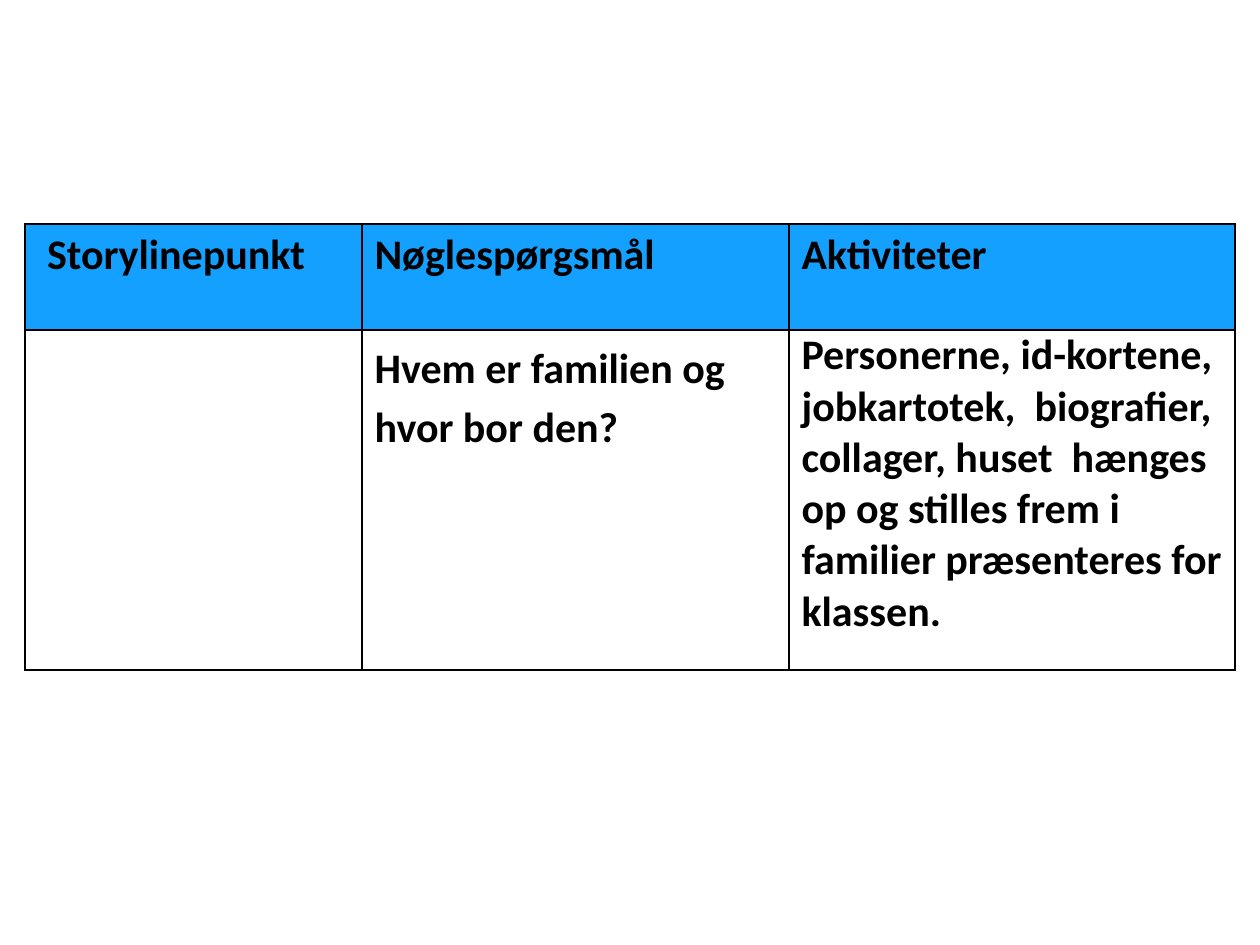
from lxml import etree
from pptx import Presentation
from pptx.dml.color import RGBColor
from pptx.oxml.ns import qn
from pptx.util import Emu, Pt

PX = 914400 // 126
BLACK, BLUE = "000000", "14A0FF"
BLANK_LAYOUT = 6

HEADINGS = [" Storylinepunkt", "Nøglespørgsmål", "Aktiviteter"]
ANSWERS = [
    "",
    "Hvem er familien og hvor bor den?",
    "Personerne, id-kortene, jobkartotek,  biografier, collager, huset  "
    "hænges op og stilles frem i familier præsenteres for klassen.",
]
LEFT, TOP = 25, 224
COLUMN_WIDTHS = [337, 427, 446]
ROW_HEIGHTS = [106, 340]


def px(length):
    return Emu(length * PX)


def color(value):
    return RGBColor.from_string(value)


def write(cell, text, size=24, spacing=None, inset=6):
    cell.margin_top = cell.margin_bottom = px(inset)
    para = cell.text_frame.paragraphs[0]
    para.font.size = Pt(size)
    if spacing:
        para.line_spacing = spacing
    if text:
        span = para.add_run()
        span.text = text
        span.font.name = "Calibri"
        span.font.size = Pt(size)
        span.font.bold = True
        span.font.color.rgb = color(BLACK)


def outline(cell, width=1):
    properties = cell._tc.get_or_add_tcPr()
    for position, side in enumerate(("lnL", "lnR", "lnT", "lnB")):
        line = etree.Element(qn(f"a:{side}"), w=str(Pt(width)))
        fill = etree.SubElement(line, qn("a:solidFill"))
        etree.SubElement(fill, qn("a:srgbClr"), val=BLACK)
        properties.insert(position, line)


deck = Presentation()
deck.slide_width, deck.slide_height = px(1260), px(945)
page = deck.slides.add_slide(deck.slide_layouts[BLANK_LAYOUT])

table = page.shapes.add_table(
    len(ROW_HEIGHTS), len(COLUMN_WIDTHS), px(LEFT), px(TOP),
    px(sum(COLUMN_WIDTHS)), px(sum(ROW_HEIGHTS))).table
table.first_row = table.horz_banding = False
for column, width in zip(table.columns, COLUMN_WIDTHS):
    column.width = px(width)
for row, height in zip(table.rows, ROW_HEIGHTS):
    row.height = px(height)

for cell in table.iter_cells():
    cell.fill.background()
    outline(cell)
for index, heading in enumerate(HEADINGS):
    cell = table.cell(0, index)
    cell.fill.solid()
    cell.fill.fore_color.rgb = color(BLUE)
    write(cell, heading)

ANSWER_FORMATS = [{}, {"spacing": 1.15}, {"inset": 0}]
for index, (answer, style) in enumerate(zip(ANSWERS, ANSWER_FORMATS)):
    write(table.cell(1, index), answer, **style)

deck.save("out.pptx")
